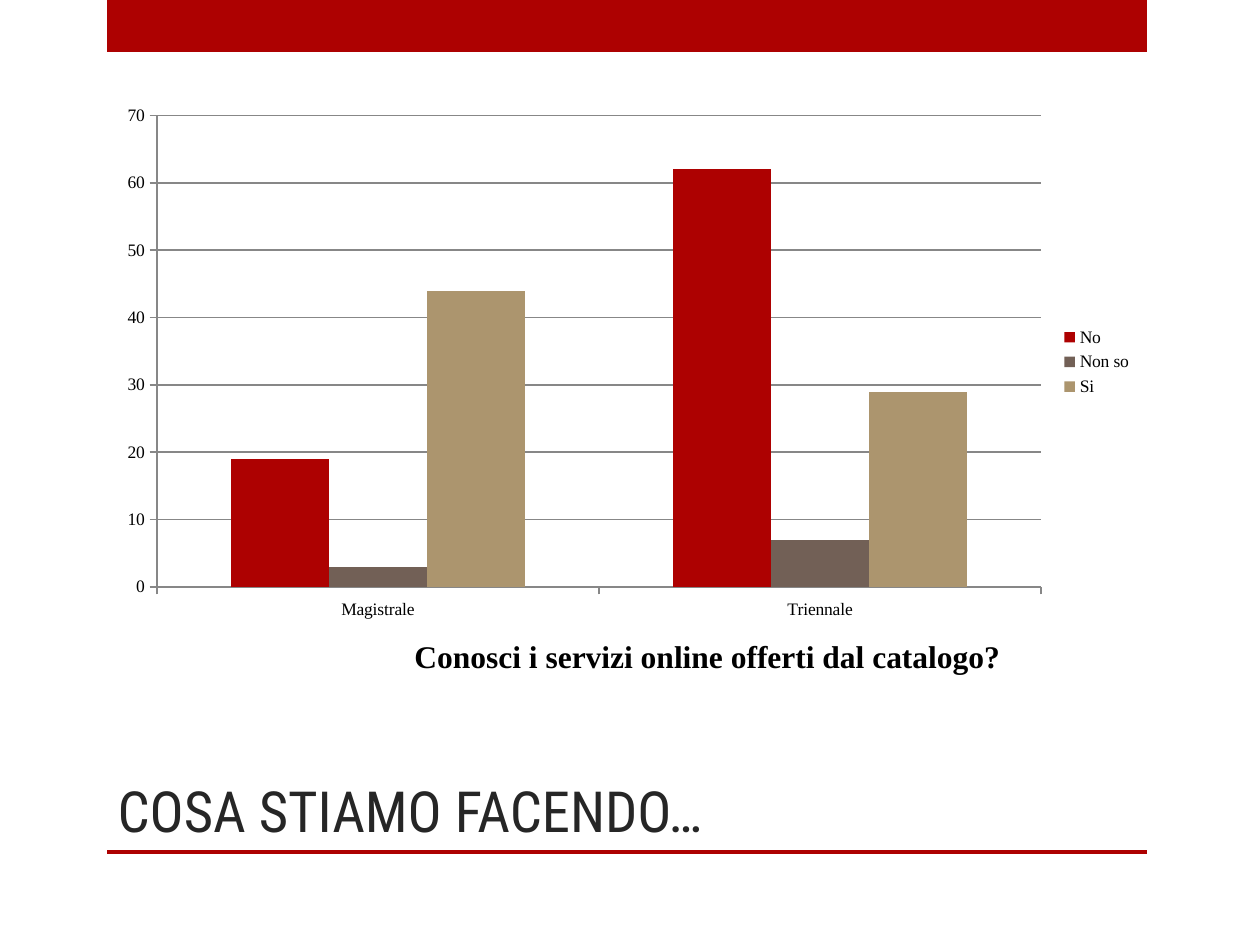
from dataclasses import dataclass

from lxml.etree import SubElement
from pptx import Presentation
from pptx.chart.data import CategoryChartData
from pptx.dml.color import RGBColor
from pptx.enum.chart import XL_CHART_TYPE, XL_LEGEND_POSITION, XL_TICK_MARK
from pptx.enum.shapes import MSO_SHAPE
from pptx.enum.text import MSO_ANCHOR, PP_ALIGN
from pptx.oxml.ns import qn
from pptx.util import Emu, Pt

EMU_PER_PX = 914400 / 126


def px(length):
    return Emu(round(length * EMU_PER_PX))


@dataclass(frozen=True)
class Theme:
    red: str = "AD0101"
    brown: str = "726056"
    tan: str = "AC956E"
    axis: str = "878787"
    title_color: str = "262626"
    text_color: str = "000000"
    title_font: str = "Roboto Condensed"
    text_font: str = "Times New Roman"
    title_size: float = 32.4
    caption_size: float = 18
    chart_size: float = 10


class SlideBuilder:
    def __init__(self, slide, theme):
        self.slide = slide
        self.theme = theme

    def style_font(self, font, name, size, color, bold=False):
        font.name = name
        font.size = Pt(size)
        font.bold = bold
        font.color.rgb = RGBColor.from_string(color)

    def place(self, shape, left, top, width, height):
        shape.left, shape.top = px(left), px(top)
        shape.width, shape.height = px(width), px(height)

    def bar(self, left, top, width, height):
        shape = self.slide.shapes.add_shape(
            MSO_SHAPE.RECTANGLE, px(left), px(top), px(width), px(height))
        shape.shadow.inherit = False
        shape.fill.solid()
        shape.fill.fore_color.rgb = RGBColor.from_string(self.theme.red)
        shape.line.fill.background()

    def title(self, text, *box):
        shape = self.slide.shapes.title
        self.place(shape, *box)
        frame = shape.text_frame
        frame.vertical_anchor = MSO_ANCHOR.BOTTOM
        paragraph = frame.paragraphs[0]
        paragraph.alignment = PP_ALIGN.LEFT
        run = paragraph.add_run()
        run.text = text
        self.style_font(run.font, self.theme.title_font,
                        self.theme.title_size, self.theme.title_color)

    def caption(self, text, left, top, width, height):
        shape = self.slide.shapes.add_textbox(
            px(left), px(top), px(width), px(height))
        shape.text_frame.word_wrap = True
        run = shape.text_frame.paragraphs[0].add_run()
        run.text = text
        self.style_font(run.font, self.theme.text_font,
                        self.theme.caption_size, self.theme.text_color, True)

    def style_line(self, line):
        line.color.rgb = RGBColor.from_string(self.theme.axis)
        line.width = Pt(1)

    def column_chart(self, categories, series_list, left, top, width, height):
        data = CategoryChartData()
        data.categories = categories
        for name, values, _ in series_list:
            data.add_series(name, values)
        chart = self.slide.shapes.add_chart(
            XL_CHART_TYPE.COLUMN_CLUSTERED,
            px(left), px(top), px(width), px(height), data).chart
        self.style_font(chart.font, self.theme.text_font,
                        self.theme.chart_size, self.theme.text_color)
        chart.has_title = False
        chart.has_legend = True
        chart.legend.position = XL_LEGEND_POSITION.RIGHT
        chart.legend.include_in_layout = False

        plot = chart.plots[0]
        plot.gap_width = 150
        plot.overlap = 0
        plot.vary_by_categories = False
        for series, (_, _, color) in zip(plot.series, series_list):
            series.format.fill.solid()
            series.format.fill.fore_color.rgb = RGBColor.from_string(color)

        for axis in (chart.category_axis, chart.value_axis):
            axis.major_tick_mark = XL_TICK_MARK.OUTSIDE
            axis.minor_tick_mark = XL_TICK_MARK.NONE
            self.style_line(axis.format.line)
        value_axis = chart.value_axis
        value_axis.minimum_scale, value_axis.maximum_scale = 0, 70
        value_axis.major_unit = 10
        value_axis.has_major_gridlines = True
        self.style_line(value_axis.major_gridlines.format.line)

        # Fixed inner plot area, as fractions of the chart
        plot_area = chart.plots[0]._element.getparent()
        layout = plot_area.find(qn("c:layout"))
        if layout is None:
            layout = plot_area.makeelement(qn("c:layout"))
            plot_area.insert(0, layout)
        manual = SubElement(layout, qn("c:manualLayout"))
        for tag, value in (("layoutTarget", "inner"), ("xMode", "edge"),
                           ("yMode", "edge"), ("x", "0.05"), ("y", "0.04"),
                           ("w", "0.85"), ("h", "0.88")):
            SubElement(manual, qn(f"c:{tag}")).set("val", value)


def main():
    theme = Theme()
    presentation = Presentation()
    presentation.slide_width, presentation.slide_height = px(1260), px(945)
    slide = presentation.slides.add_slide(presentation.slide_layouts[5])
    builder = SlideBuilder(slide, theme)

    # Red bands
    builder.bar(107, 0, 1040, 52)
    builder.bar(107, 850, 1040, 4)

    # Title and question
    builder.title("COSA STIAMO FACENDO…", 105, 770, 935, 80)
    builder.caption("Conosci i servizi online offerti dal catalogo?",
                    402, 631, 725, 50)

    # Answers by degree level
    builder.column_chart(
        ["Magistrale", "Triennale"],
        [("No", (19, 62), theme.red),
         ("Non so", (3, 7), theme.brown),
         ("Si", (44, 29), theme.tan)],
        105, 94, 1040, 536)

    presentation.save("out.pptx")


if __name__ == "__main__":
    main()
